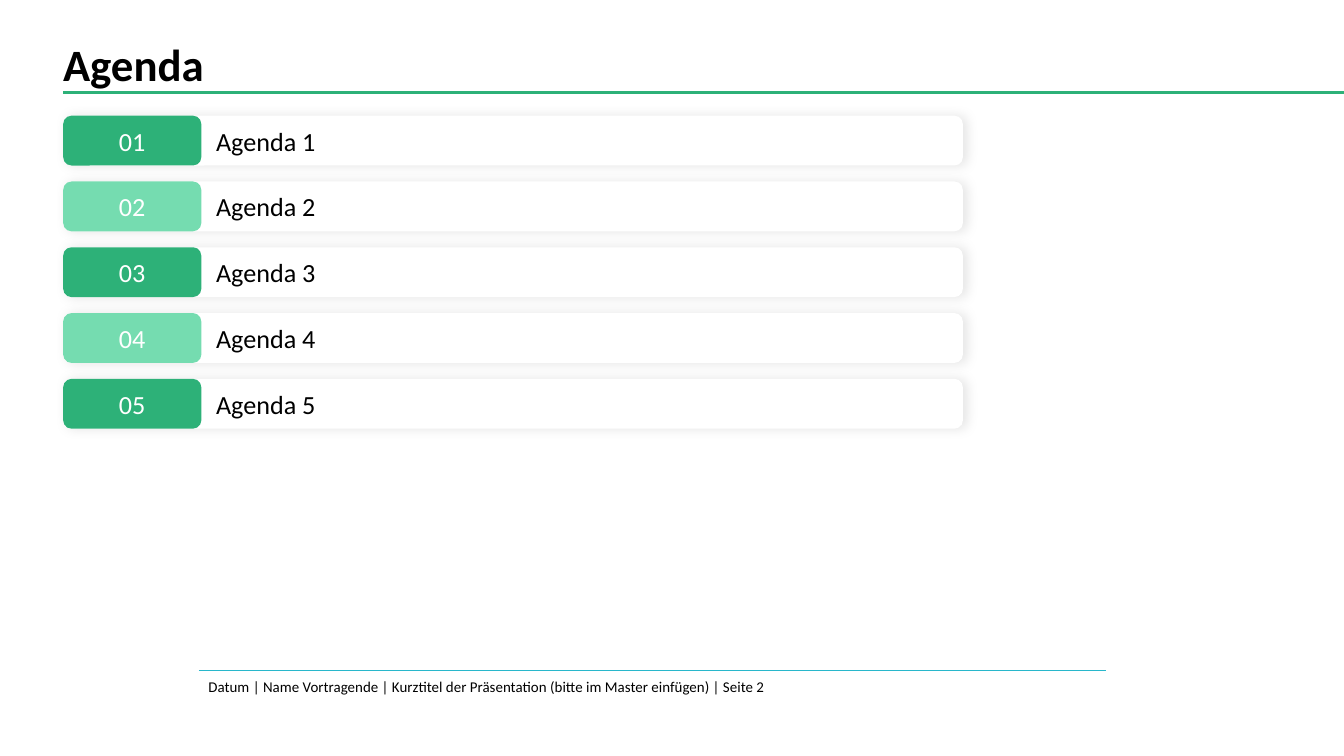
"""Build the agenda slide with numbered rows, a title rule and a footer."""
from lxml import etree
from pptx import Presentation
from pptx.dml.color import RGBColor
from pptx.enum.shapes import MSO_CONNECTOR, MSO_SHAPE
from pptx.enum.text import MSO_ANCHOR, PP_ALIGN
from pptx.oxml import parse_xml
from pptx.oxml.ns import nsdecls, qn
from pptx.util import Pt

ROUNDED = MSO_SHAPE.ROUNDED_RECTANGLE
STRAIGHT = MSO_CONNECTOR.STRAIGHT
TOP, MIDDLE, BOTTOM = MSO_ANCHOR.TOP, MSO_ANCHOR.MIDDLE, MSO_ANCHOR.BOTTOM
LEFT, CENTER = PP_ALIGN.LEFT, PP_ALIGN.CENTER

TITLE = "Agenda"
AGENDA = ["Agenda 1", "Agenda 2", "Agenda 3", "Agenda 4", "Agenda 5"]
FOOTER = ("Datum | Name Vortragende | Kurztitel der Präsentation "
          "(bitte im Master einfügen) | Seite 2")

THEME = {
    "font": "Calibri",
    "text": "000000",
    "white": "FFFFFF",
    "badges": ("2DB178", "75DCB0"),
    "title_rule": "2DB178",
    "footer_rule": "28B7CB",
    "title_size": 24,
    "row_size": 14,
    "footer_size": 8,
}

SLIDE_WIDTH, SLIDE_HEIGHT = 720, 405
MARGIN = 33.84
ROW_TOP, ROW_STEP, ROW_HEIGHT = 62, 35.25, 26.7
BAR_WIDTH, BADGE_WIDTH = 482, 74
BAR_INSETS = (80.64, 3.6, 7.2, 3.6)
BADGE_INSETS = (7.2, 3.6, 7.2, 3.6)

SHADOW = (
    f'<a:effectLst {nsdecls("a")}>'
    '<a:outerShdw blurRad="76200" dist="25400" dir="0" algn="l" rotWithShape="0">'
    '<a:srgbClr val="000000"><a:alpha val="10000"/></a:srgbClr>'
    '</a:outerShdw></a:effectLst>'
)


def write(shape, text, size, color=THEME["text"], bold=False, align=LEFT,
          anchor=TOP, insets=(0, 0, 0, 0)):
    frame = shape.text_frame
    frame.word_wrap = True
    frame.vertical_anchor = anchor
    (frame.margin_left, frame.margin_top,
     frame.margin_right, frame.margin_bottom) = map(Pt, insets)
    paragraph = frame.paragraphs[0]
    paragraph.alignment = align
    run = paragraph.add_run()
    run.text = text
    run.font.name = THEME["font"]
    run.font.size = Pt(size)
    run.font.bold = bold
    run.font.color.rgb = RGBColor.from_string(color)


def add_text(slide, box, text, **text_format):
    write(slide.shapes.add_textbox(*map(Pt, box)), text, **text_format)


def add_rule(slide, start, end, top, color, width):
    rule = slide.shapes.add_connector(STRAIGHT, Pt(start), Pt(top), Pt(end), Pt(top))
    rule.line.color.rgb = RGBColor.from_string(color)
    rule.line.width = Pt(width)
    etree.SubElement(rule._element.spPr, qn("a:effectLst"))


def add_rounded(slide, top, width, fill):
    shape = slide.shapes.add_shape(
        ROUNDED, Pt(MARGIN), Pt(top), Pt(width), Pt(ROW_HEIGHT))
    shape.shadow.inherit = False
    shape.fill.solid()
    shape.fill.fore_color.rgb = RGBColor.from_string(fill)
    shape.line.fill.background()
    return shape


def add_shadow(shape):
    properties = shape._element.spPr
    properties.replace(properties.find(qn("a:effectLst")), parse_xml(SHADOW))


def add_row(slide, index, label):
    top = ROW_TOP + index * ROW_STEP
    bar = add_rounded(slide, top, BAR_WIDTH, THEME["white"])
    add_shadow(bar)
    write(bar, label, THEME["row_size"], anchor=MIDDLE, insets=BAR_INSETS)
    badge = add_rounded(slide, top, BADGE_WIDTH, THEME["badges"][index % 2])
    write(badge, f"{index + 1:02}", THEME["row_size"], color=THEME["white"],
          align=CENTER, anchor=MIDDLE, insets=BADGE_INSETS)


def main():
    presentation = Presentation()
    presentation.slide_width = Pt(SLIDE_WIDTH)
    presentation.slide_height = Pt(SLIDE_HEIGHT)
    slide = presentation.slides.add_slide(presentation.slide_layouts[6])
    add_text(slide, (111.6, 362.9, 418.3, 19.4), FOOTER, size=THEME["footer_size"])
    add_rule(slide, 106.56, 592.56, 359.2, THEME["footer_rule"], 0.5)
    add_rule(slide, MARGIN, SLIDE_WIDTH, 49.6, THEME["title_rule"], 2)
    add_text(slide, (MARGIN, 5.76, 660.2, 42.5), TITLE, size=THEME["title_size"],
             bold=True, anchor=BOTTOM)
    for index, label in enumerate(AGENDA):
        add_row(slide, index, label)
    presentation.save("out.pptx")


if __name__ == "__main__":
    main()
